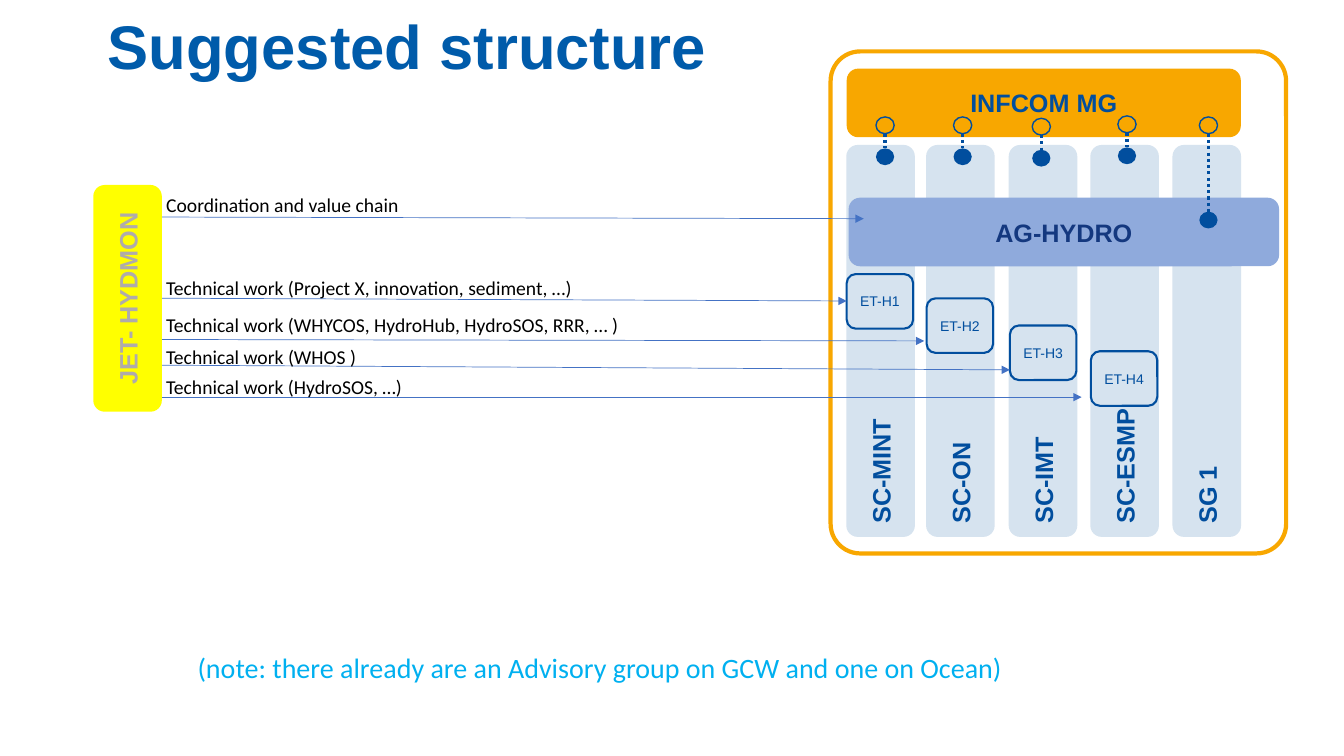
from lxml.etree import SubElement
from pptx import Presentation
from pptx.dml.color import RGBColor
from pptx.enum.dml import MSO_LINE
from pptx.enum.shapes import MSO_CONNECTOR, MSO_SHAPE
from pptx.enum.text import MSO_ANCHOR, MSO_AUTO_SIZE, PP_ALIGN
from pptx.oxml.ns import qn
from pptx.util import Pt

TITLE_BLUE = RGBColor(0x00, 0x5B, 0xAA)
NAVY = RGBColor(0x01, 0x4E, 0x9E)
DARK_NAVY = RGBColor(0x14, 0x38, 0x7F)
ORANGE = RGBColor(0xF8, 0xA7, 0x00)
PALE_BLUE = RGBColor(0xD6, 0xE3, 0xEF)
MID_BLUE = RGBColor(0x8F, 0xAA, 0xDC)
ARROW_BLUE = RGBColor(0x44, 0x72, 0xC4)
YELLOW = RGBColor(0xFF, 0xFF, 0x00)
GREY = RGBColor(0xAF, 0xAB, 0xAB)
BLACK = RGBColor(0x00, 0x00, 0x00)
NOTE_BLUE = RGBColor(0x00, 0xB0, 0xF0)

BAR = 49  # thickness of every bar and pillar

deck = Presentation()
deck.slide_width, deck.slide_height = Pt(960), Pt(540)
page = deck.slides.add_slide(deck.slide_layouts[5])


def add_block(kind, left, top, width, height, fill=None, line=None, weight=1,
              text="", color=NAVY, size=18, bold=True, align=PP_ALIGN.CENTER):
    block = page.shapes.add_shape(kind, Pt(left), Pt(top), Pt(width), Pt(height))
    block.shadow.inherit = False
    if fill is None:
        block.fill.background()
    else:
        block.fill.solid()
        block.fill.fore_color.rgb = fill
    if line is None:
        block.line.fill.background()
    else:
        block.line.color.rgb = line
        block.line.width = Pt(weight)
    if text:
        block.text_frame.text = text
        block.text_frame.vertical_anchor = MSO_ANCHOR.MIDDLE
        para = block.text_frame.paragraphs[0]
        para.alignment = align
        para.font.name, para.font.size, para.font.bold = "Arial", Pt(size), bold
        para.font.color.rgb = color
    return block


def add_line(start_x, start_y, end_x, end_y, color, weight):
    connector = page.shapes.add_connector(
        MSO_CONNECTOR.STRAIGHT, Pt(start_x), Pt(start_y), Pt(end_x), Pt(end_y))
    connector.line.color.rgb = color
    connector.line.width = Pt(weight)
    SubElement(connector.element.spPr, qn("a:effectLst"))
    return connector


# Title
title = page.shapes.title
title.left, title.top, title.width, title.height = Pt(77), Pt(24.5), Pt(842), Pt(36)
frame = title.text_frame
frame.text = "Suggested structure"
frame.margin_left = frame.margin_right = frame.margin_top = frame.margin_bottom = 0
frame.vertical_anchor = MSO_ANCHOR.TOP
frame.auto_size = MSO_AUTO_SIZE.SHAPE_TO_FIT_TEXT
para = frame.paragraphs[0]
para.alignment = PP_ALIGN.LEFT
para.line_spacing = Pt(33.6)
para.font.name, para.font.size, para.font.bold = "Arial", Pt(44), True
para.font.color.rgb = TITLE_BLUE

# Commission frame and management group
ROUNDED = MSO_SHAPE.ROUNDED_RECTANGLE
border = add_block(ROUNDED, 593.3, 36.7, 325.4, 358.6, line=ORANGE, weight=3)
border.adjustments[0] = 0.065
add_block(ROUNDED, 604.8, 49, 281.5, BAR, fill=ORANGE, text="INFCOM MG")

# Pillars, turned to read upwards
PILLAR_LENGTH = 280
for name, center in [("SC-MINT", 629), ("SC-ON", 686), ("SC-IMT", 745),
                     ("SC-ESMP", 803.3), ("SG 1", 862)]:
    pillar = add_block(ROUNDED, center - PILLAR_LENGTH / 2, 219, PILLAR_LENGTH, BAR,
                       fill=PALE_BLUE, text=name, align=PP_ALIGN.LEFT)
    pillar.rotation = 270

# Advisory group across the pillars
add_block(ROUNDED, 606.2, 141.2, 307.5, BAR, fill=MID_BLUE,
          text="AG-HYDRO", color=DARK_NAVY)

# Expert teams
teams = [(604.8, 195.8), (661.9, 213.1), (721.4, 232.5), (779.2, 250.9)]
for number, (left, top) in enumerate(teams, 1):
    add_block(ROUNDED, left, top, 47.5, 39, line=NAVY, weight=1.5,
              text=f"ET-H{number}", size=10, bold=False)

# Dotted links from the management group: centre, ring top, dot top
DOT_WIDTH, DOT_HEIGHT = 13, 12
for center, ring_top, dot_top in [(632.2, 83.5, 106), (687.6, 83.5, 106),
                                  (743.8, 84.5, 107), (805, 82.8, 105.3),
                                  (863.2, 83.5, 151.2)]:
    left = center - DOT_WIDTH / 2
    add_block(MSO_SHAPE.OVAL, left, dot_top, DOT_WIDTH, DOT_HEIGHT, fill=NAVY)
    add_block(MSO_SHAPE.OVAL, left, ring_top, DOT_WIDTH, DOT_HEIGHT, line=NAVY)
    link = add_line(center, ring_top + DOT_HEIGHT, center, dot_top, NAVY, 2.25)
    link.line.dash_style = MSO_LINE.ROUND_DOT

# Arrows from the joint team to the groups
for start_x, start_y, end_x, end_y in [(101.5, 155, 617, 156.2),
                                       (115.2, 213, 604.8, 215),
                                       (101.5, 242.5, 660.2, 243.5),
                                       (105.8, 260.8, 721.4, 264.2),
                                       (105.8, 283.7, 772.6, 283.7)]:
    arrow = add_line(start_x, start_y, end_x, end_y, ARROW_BLUE, 0.5)
    SubElement(arrow.element.spPr.find(qn("a:ln")), qn("a:tailEnd"), type="triangle")

# Joint team
joint_team = add_block(ROUNDED, 10.1, 188.6, 162, BAR, fill=YELLOW,
                       text="JET- HYDMON", color=GREY)
joint_team.rotation = 270

# Arrow labels and the closing note: text, left, top, width, height, size, colour, wrap
texts = [(text, 111.6, top, width, 24.2, 14, BLACK, False) for text, top, width in [
    ("Coordination and value chain", 134, 182),
    ("Technical work (Project X, innovation, sediment, …)", 193.2, 307.5),
    ("Technical work (WHYCOS, HydroHub, HydroSOS, RRR, … )", 219.8, 350.6),
    ("Technical work (WHOS )", 242.5, 151),
    ("Technical work (HydroSOS, …)", 264.2, 185)]]
texts.append(("(note: there already are an Advisory group on GCW and one on Ocean)",
              134, 460.8, 671, 31.5, 20, NOTE_BLUE, True))
for text, left, top, width, height, size, color, wrap in texts:
    box = page.shapes.add_textbox(Pt(left), Pt(top), Pt(width), Pt(height))
    box.text_frame.text = text
    box.text_frame.word_wrap = wrap
    box.text_frame.auto_size = MSO_AUTO_SIZE.SHAPE_TO_FIT_TEXT
    para = box.text_frame.paragraphs[0]
    para.font.name, para.font.size = "Calibri", Pt(size)
    para.font.color.rgb = color

deck.save("out.pptx")
